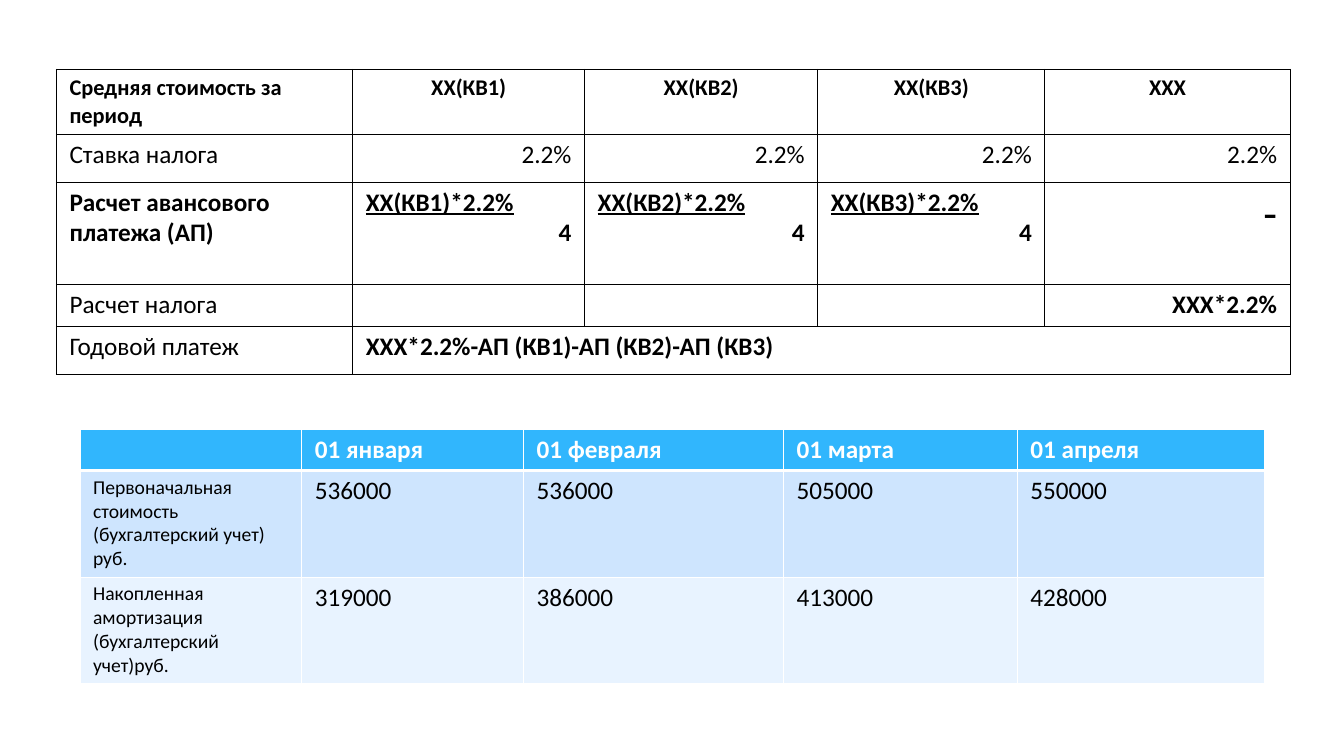
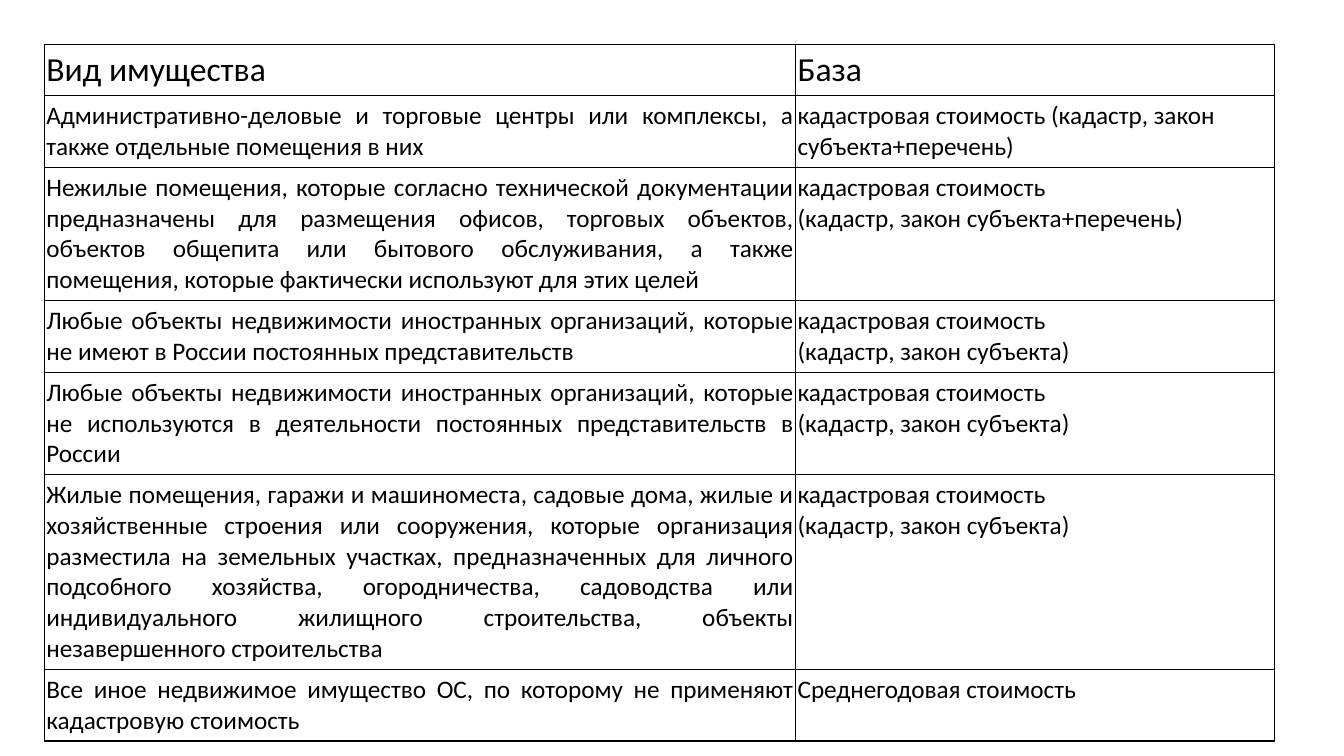
"""Build two slides of property tax tables."""
from dataclasses import dataclass

import pptx
import pptx.dml.color
import pptx.enum.text
import pptx.oxml
import pptx.oxml.ns
import pptx.util

ALIGN = pptx.enum.text.PP_ALIGN
LEFT, CENTER, RIGHT, JUSTIFY = ALIGN.LEFT, ALIGN.CENTER, ALIGN.RIGHT, ALIGN.JUSTIFY
FONT = "Calibri"
WIDTH, HEIGHT = pptx.util.Inches(13.33), pptx.util.Inches(7.5)
BLACK, WHITE = "000000", "FFFFFF"
HEADER, BAND_DARK, BAND_LIGHT = "31B6FD", "CEE5FE", "E8F3FF"


@dataclass(frozen=True)
class Para:
    text: str
    size: int = 18
    bold: bool = False
    align: ALIGN = LEFT
    underline: bool = False
    color: str = BLACK


@dataclass(frozen=True)
class Cell:
    paras: tuple[Para, ...] = ()
    fill: str = ""
    span: int = 1
    bottom: float = 1


@dataclass(frozen=True)
class Grid:
    left: float
    top: float
    cols: tuple[float, ...]
    rows: tuple[float, ...]
    cells: list[list[Cell]]
    border: str = BLACK
    inset: float = 0.13


def across(share: float) -> int:
    return round(WIDTH * share / 100)


def down(share: float) -> int:
    return round(HEIGHT * share / 100)


def rgb(color: str) -> pptx.dml.color.RGBColor:
    return pptx.dml.color.RGBColor.from_string(color)


def cell(text: str, fill: str = "", span: int = 1, bottom: float = 1, **style) -> Cell:
    return Cell((Para(text, **style),), fill, span, bottom)


def set_borders(c, color: str, bottom: float) -> None:
    tc_pr = c._tc.get_or_add_tcPr()
    ns = pptx.oxml.ns.nsdecls("a")
    for side, width in (("L", 1), ("R", 1), ("T", 1), ("B", bottom)):
        tc_pr.append(pptx.oxml.parse_xml(
            f'<a:ln{side} {ns} w="{pptx.util.Pt(width)}"><a:solidFill>'
            f'<a:srgbClr val="{color}"/></a:solidFill></a:ln{side}>'))


def write(tf, paras: tuple[Para, ...]) -> None:
    for i, para in enumerate(paras):
        p = tf.paragraphs[0] if i == 0 else tf.add_paragraph()
        p.alignment = para.align
        r = p.add_run()
        r.text = para.text
        r.font.name, r.font.size = FONT, pptx.util.Pt(para.size)
        r.font.bold, r.font.underline = para.bold, para.underline
        r.font.color.rgb = rgb(para.color)


def draw_grid(s, grid: Grid) -> None:
    sp = s.shapes.add_table(
        len(grid.rows), len(grid.cols), across(grid.left), down(grid.top),
        across(sum(grid.cols)), down(sum(grid.rows)))
    table = sp.table
    table.first_row = table.horz_banding = False
    for col, share in zip(table.columns, grid.cols):
        col.width = across(share)
    for row, share in zip(table.rows, grid.rows):
        row.height = down(share)
    for i, line in enumerate(grid.cells):
        j = 0
        for item in line:
            for k in range(j, j + item.span):
                c = table.cell(i, k)
                set_borders(c, grid.border, item.bottom)
                c.margin_left = c.margin_right = pptx.util.Inches(grid.inset)
                c.margin_top = c.margin_bottom = pptx.util.Inches(0.05)
                if item.fill:
                    c.fill.solid()
                    c.fill.fore_color.rgb = rgb(item.fill)
                else:
                    c.fill.background()
            c = table.cell(i, j)
            if item.span > 1:
                c.merge(table.cell(i, j + item.span - 1))
            write(c.text_frame, item.paras)
            j += item.span


def tax_grid() -> Grid:
    quarters = [f"ХХ(КВ{n})" for n in (1, 2, 3)]
    advances = [
        Cell((Para(f"{q}*2.2%", bold=True, underline=True), Para("4", bold=True, align=RIGHT)))
        for q in quarters]
    return Grid(4.2, 9.2, (22.05, 17.25, 17.35, 16.9, 18.25), (8.6, 6.3, 13.5, 5.6, 6.35), [
        [cell("Средняя стоимость за период", size=16, bold=True)]
        + [cell(q, size=16, bold=True, align=CENTER) for q in quarters + ["ХХХ"]],
        [cell("Ставка налога")] + [cell("2.2%", align=RIGHT)] * 4,
        [cell("Расчет авансового платежа (АП)", bold=True), *advances,
         cell("-", size=32, align=RIGHT)],
        [cell("Расчет налога")] + [Cell()] * 3 + [cell("ХХХ*2.2%", bold=True, align=RIGHT)],
        [cell("Годовой платеж"),
         cell("ХХХ*2.2%-АП (КВ1)-АП (КВ2)-АП (КВ3)", span=4, bold=True)],
    ])


def asset_grid() -> Grid:
    months = ("января", "февраля", "марта", "апреля")
    bands = (
        ("Первоначальная стоимость (бухгалтерский учет) руб.", BAND_DARK,
         (536000, 536000, 505000, 550000)),
        ("Накопленная амортизация (бухгалтерский учет)руб.", BAND_LIGHT,
         (319000, 386000, 413000, 428000)),
    )
    header = [Cell(fill=HEADER, bottom=3)] + [
        cell(f"01 {m}", HEADER, bottom=3, bold=True, color=WHITE) for m in months]
    body = [[cell(label, fill, size=14)] + [cell(str(v), fill) for v in values]
            for label, fill, values in bands]
    return Grid(5.95, 56.8, (16.5, 16.5, 19.35, 17.4, 18.4), (5.45, 14.1, 14.1),
                [header, *body], border=WHITE)


def base_grid() -> Grid:
    value = "кадастровая стоимость"
    law = (value, "(кадастр, закон субъекта)")
    listed = "(кадастр, закон субъекта+перечень)"
    foreign = "Любые объекты недвижимости иностранных организаций, которые не "
    kinds = (
        ("Административно-деловые и торговые центры или комплексы, а также отдельные "
         "помещения в них", (f"{value} {listed}",)),
        ("Нежилые помещения, которые согласно технической документации предназначены для "
         "размещения офисов, торговых объектов, объектов общепита или бытового "
         "обслуживания, а также помещения, которые фактически используют для этих целей",
         (value, listed)),
        (foreign + "имеют в России постоянных представительств", law),
        (foreign + "используются в деятельности постоянных представительств в России", law),
        ("Жилые помещения, гаражи и машиноместа, садовые дома, жилые и хозяйственные "
         "строения или сооружения, которые организация разместила на земельных участках, "
         "предназначенных для личного подсобного хозяйства, огородничества, садоводства "
         "или индивидуального жилищного строительства, объекты незавершенного "
         "строительства", law),
        ("Все иное недвижимое имущество ОС, по которому не применяют кадастровую "
         "стоимость", ("Среднегодовая стоимость",)),
    )
    header = [cell(text, size=24) for text in ("Вид имущества", "База")]
    body = [[cell(kind, align=JUSTIFY), Cell(tuple(Para(t) for t in base))]
            for kind, base in kinds]
    return Grid(3.3, 5.85, (55.9, 35.65), (6.8, 9.45, 17.65, 9.45, 13.5, 25.75, 9.45),
                [header, *body], inset=0.02)


def main() -> None:
    prs = pptx.Presentation()
    prs.slide_width, prs.slide_height = WIDTH, HEIGHT
    for grids in ((tax_grid(), asset_grid()), (base_grid(),)):
        s = prs.slides.add_slide(prs.slide_layouts[6])
        for grid in grids:
            draw_grid(s, grid)
    prs.save("out.pptx")


if __name__ == "__main__":
    main()
